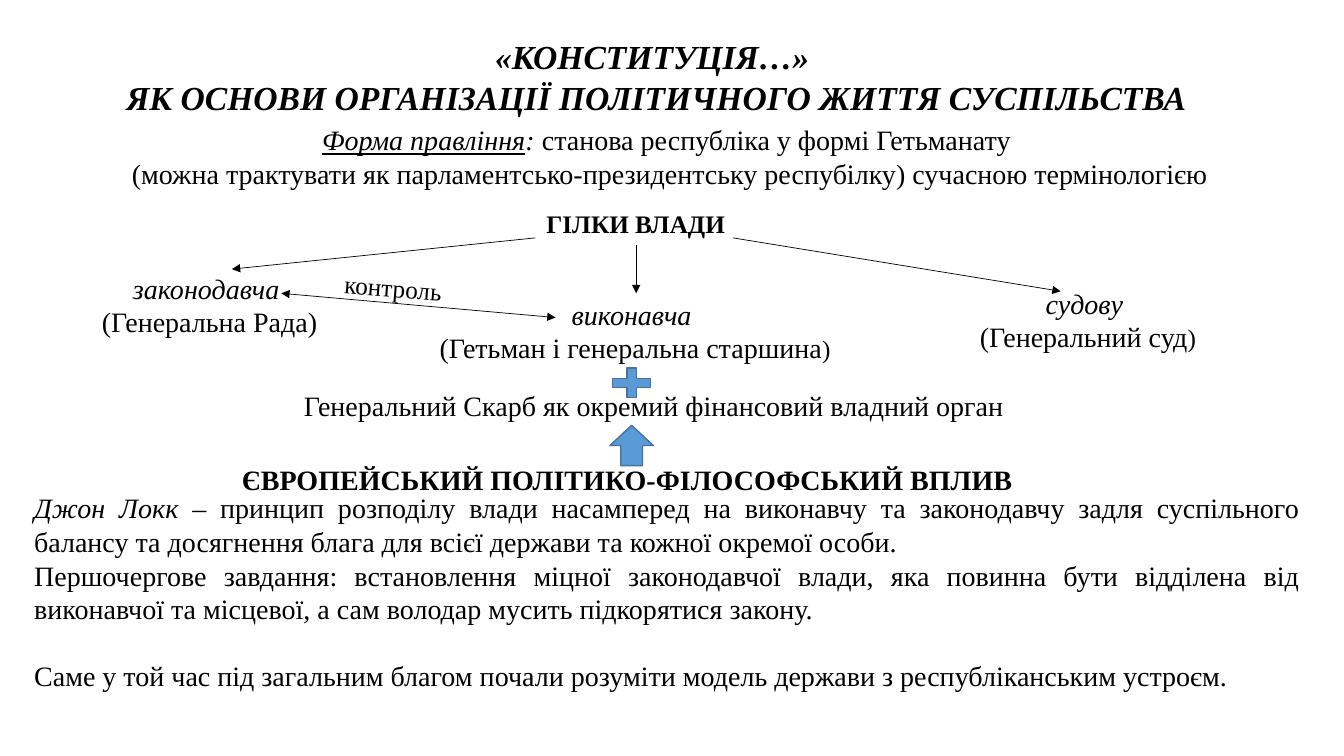
"""Build the slide on the branches of power in the Hetmanate constitution."""
import pptx
import pptx.dml.color
import pptx.enum.shapes
import pptx.enum.text
import pptx.oxml.ns
import pptx.util
from lxml import etree
from pptx.util import Inches

BLACK = pptx.dml.color.RGBColor(0x00, 0x00, 0x00)
BLUE = pptx.dml.color.RGBColor(0x5B, 0x9B, 0xD5)
DARK_BLUE = pptx.dml.color.RGBColor(0x43, 0x73, 0x9E)
FONT = "Times New Roman"
ALIGN = pptx.enum.text.PP_ALIGN
SHAPE = pptx.enum.shapes.MSO_SHAPE


def place(shape, left, top, width, height):
    """Set the position and size of a shape in inches."""
    shape.left, shape.top = Inches(left), Inches(top)
    shape.width, shape.height = Inches(width), Inches(height)


def write(shape, paragraphs, size=20, align=ALIGN.CENTER, wrap=True):
    """Fill a shape with paragraphs of (text, style letters, optional size) runs."""
    frame = shape.text_frame
    frame.word_wrap = wrap
    frame.auto_size = pptx.enum.text.MSO_AUTO_SIZE.NONE
    frame.vertical_anchor = pptx.enum.text.MSO_ANCHOR.TOP
    for index, runs in enumerate(paragraphs):
        paragraph = frame.add_paragraph() if index else frame.paragraphs[0]
        paragraph.alignment = align
        for text, style, *own_size in runs:
            run = paragraph.add_run()
            run.text = text
            font = run.font
            font.name = FONT
            font.size = pptx.util.Pt(own_size[0] if own_size else size)
            font.color.rgb = BLACK
            font.bold = "b" in style
            font.italic = "i" in style
            font.underline = "u" in style


def add_text(slide, box, paragraphs, **options):
    """Add a text box and return it."""
    shape = slide.shapes.add_textbox(*map(Inches, box))
    write(shape, paragraphs, **options)
    return shape


def add_arrow(slide, start, end, both_ends=False):
    """Add a thin black arrow between two points."""
    connector = slide.shapes.add_connector(
        pptx.enum.shapes.MSO_CONNECTOR.STRAIGHT, *map(Inches, start + end))
    connector.line.color.rgb = BLACK
    connector.line.width = pptx.util.Pt(0.5)
    outline = connector.line._get_or_add_ln()
    for tag in ("a:headEnd", "a:tailEnd") if both_ends else ("a:tailEnd",):
        etree.SubElement(outline, pptx.oxml.ns.qn(tag), type="triangle")
    etree.SubElement(connector._element.spPr, pptx.oxml.ns.qn("a:effectLst"))


def add_symbol(slide, kind, box):
    """Add a blue preset symbol."""
    shape = slide.shapes.add_shape(kind, *map(Inches, box))
    shape.shadow.inherit = False
    shape.fill.solid()
    shape.fill.fore_color.rgb = BLUE
    shape.line.color.rgb = DARK_BLUE
    shape.line.width = pptx.util.Pt(1)


def add_branches(slide):
    """Add the three branches of power and the arrows between them."""
    add_text(slide, (5.31, 2.02, 1.99, 0.4), [[("ГІЛКИ ВЛАДИ", "b")]], size=18, wrap=False)
    branches = [
        ((0.8, 2.64, 2.56, 1.08), "законодавча ", [("(Генеральна Рада)", "")]),
        ((3.83, 2.9, 4.87, 0.77), "виконавча",
         [(" (Гетьман і генеральна старшина", ""), (")", "", 18)]),
        ((9.5, 2.79, 2.58, 0.77), "судову ", [("(Генеральний суд", ""), (")", "", 18)]),
    ]
    for box, branch, holder in branches:
        add_text(slide, box, [[(branch, "i")], holder])
    add_arrow(slide, (5.31, 2.36), (2.3, 2.67))
    add_arrow(slide, (6.31, 2.43), (6.31, 2.91))
    add_arrow(slide, (7.27, 2.36), (10.52, 2.89))
    add_arrow(slide, (2.79, 2.91), (5.51, 3.15), both_ends=True)
    control = add_text(slide, (3.32, 2.65, 1.19, 0.4), [[("контроль", "")]],
                       size=18, align=ALIGN.LEFT, wrap=False)
    control.rotation = 4.5


def add_influence(slide):
    """Add the heading and paragraphs on European influence."""
    add_text(slide, (2.3, 4.54, 9.06, 0.44),
             [[("ЄВРОПЕЙСЬКИЙ ПОЛІТИКО-ФІЛОСОФСЬКИЙ ВПЛИВ", "b")]], align=ALIGN.LEFT)
    influence = add_text(slide, (0.24, 4.82, 12.75, 2.12), [
        [("Джон Локк", "i"),
         (" – принцип розподілу влади насамперед на виконавчу та законодавчу задля "
          "суспільного балансу та досягнення блага для всієї держави та кожної "
          "окремої особи. ", "")],
        [("Першочергове завдання: встановлення міцної законодавчої влади, яка повинна "
          "бути відділена від виконавчої та місцевої, а сам володар мусить "
          "підкорятися закону.", "")],
        [("Саме у той час під загальним благом почали розуміти модель держави з "
          "республіканським устроєм.", "")],
    ], align=ALIGN.JUSTIFY)
    influence.text_frame.paragraphs[-1].space_before = pptx.util.Pt(24)


def main():
    """Build and save the presentation."""
    presentation = pptx.Presentation()
    presentation.slide_width = Inches(13.33)
    presentation.slide_height = Inches(7.5)
    slide = presentation.slides.add_slide(presentation.slide_layouts[5])
    title = slide.shapes.title
    place(title, 0.24, 0.31, 12.54, 0.91)
    write(title, [[("«КОНСТИТУЦІЯ…» ", "bi")],
                  [("ЯК ОСНОВИ ОРГАНІЗАЦІЇ ПОЛІТИЧНОГО ЖИТТЯ СУСПІЛЬСТВА", "bi")]], size=24)
    add_text(slide, (0.97, 1.17, 11.28, 0.77), [
        [("Форма правління", "iu"), (": ", "i"), ("станова республіка у формі Гетьманату", "")],
        [(" (можна трактувати як парламентсько-президентську респубілку) "
          "сучасною термінологією", "")],
    ])
    add_branches(slide)
    add_text(slide, (2.79, 3.81, 7.39, 0.44),
             [[("Генеральний Скарб як окремий фінансовий владний орган", "")]], wrap=False)
    add_influence(slide)
    add_symbol(slide, SHAPE.MATH_PLUS, (6.01, 3.6, 0.51, 0.4))
    add_symbol(slide, SHAPE.UP_ARROW, (6.05, 4.22, 0.43, 0.4))
    presentation.save("out.pptx")


if __name__ == "__main__":
    main()
